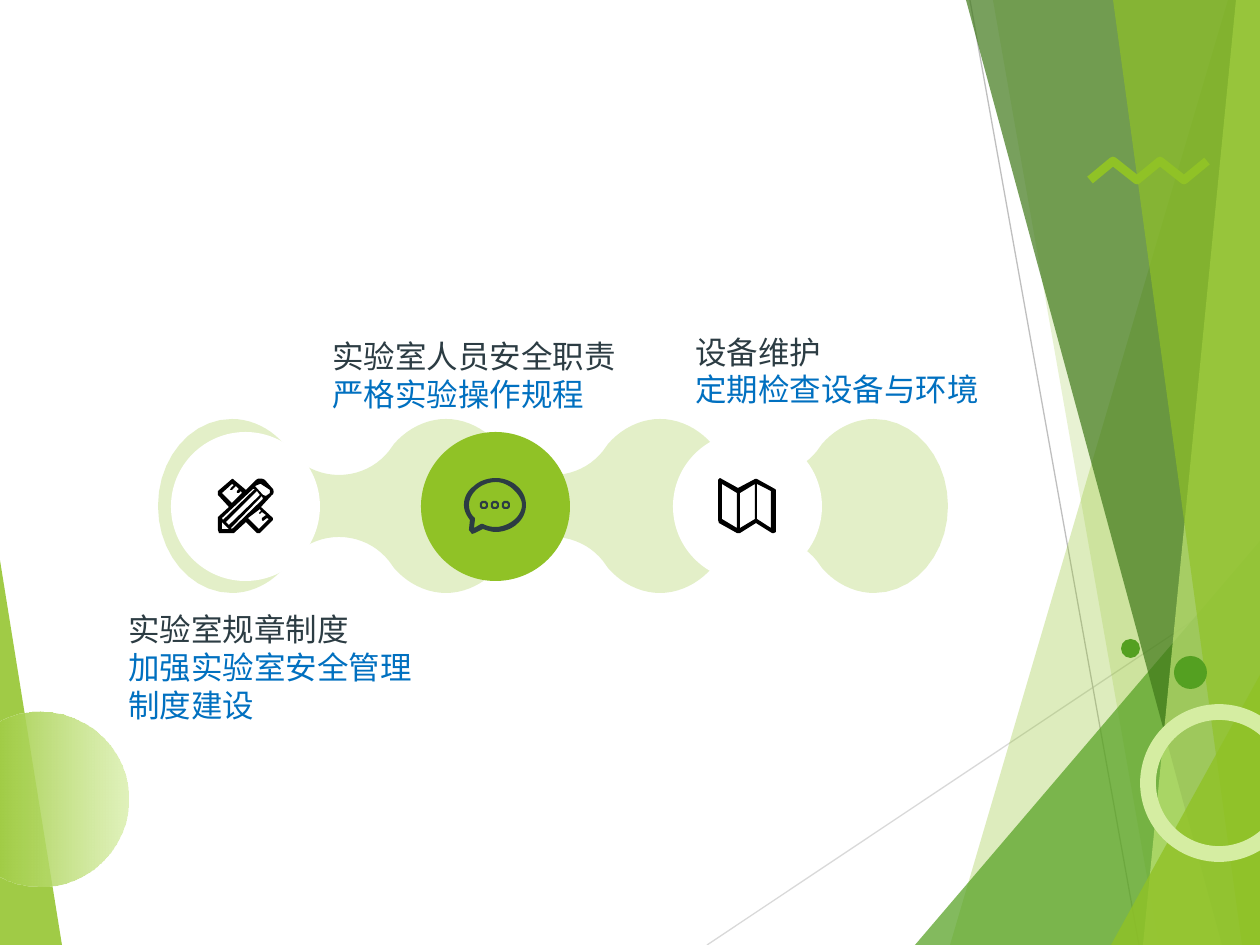
from dataclasses import dataclass

from lxml import etree
from pptx import Presentation
from pptx.dml.color import RGBColor
from pptx.enum.shapes import MSO_CONNECTOR, MSO_SHAPE
from pptx.oxml.ns import qn
from pptx.util import Emu, Pt

PX = 914400 / 126
WIDTH, HEIGHT = 1260, 945
FONT = "Noto Sans CJK JP"
GREEN, LEAF, PALE, DARK, BLUE = "90C226", "54A021", "D5EDA2", "2C3C43", "0070C0"
WHITE, BLACK = "FFFFFF", "000000"


@dataclass
class Facet:
    points: list
    color: str
    opacity: int


@dataclass
class Label:
    left: int
    top: int
    width: int
    height: int
    pitch: float
    heading: str
    detail: str


def px(value: float) -> Emu:
    return Emu(round(value * PX))


def rgb(color: str) -> RGBColor:
    return RGBColor.from_string(color)


def set_opacity(color_parent, percent: int) -> None:
    color = color_parent.find(".//" + qn("a:srgbClr"))
    etree.SubElement(color, qn("a:alpha")).set("val", str(percent * 1000))


def paint(shape, fill: str = "", line: str = "", weight: float = 0, opacity: int = 100) -> None:
    shape.shadow.inherit = False
    if fill:
        shape.fill.solid()
        shape.fill.fore_color.rgb = rgb(fill)
        if opacity < 100:
            set_opacity(shape._element.spPr.find(qn("a:solidFill")), opacity)
    else:
        shape.fill.background()
    if line:
        shape.line.color.rgb = rgb(line)
        shape.line.width = Pt(weight)
    else:
        shape.line.fill.background()


def trace(steps: list, samples: int = 10) -> list:
    """Turn points (x, y) and cubic curves (x1, y1, x2, y2, x, y) into points."""
    points = [steps[0]]
    for step in steps[1:]:
        if len(step) == 2:
            points.append(step)
            continue
        controls = [points[-1], step[:2], step[2:4], step[4:]]
        for index in range(1, samples + 1):
            t = index / samples
            weights = ((1 - t) ** 3, 3 * t * (1 - t) ** 2, 3 * t * t * (1 - t), t ** 3)
            points.append(tuple(sum(w * c[axis] for w, c in zip(weights, controls))
                                for axis in (0, 1)))
    return points


def draw_outline(shapes, contours: list, closed: bool = True):
    builder = None
    for contour in contours:
        points = [(px(x), px(y)) for x, y in trace(contour)]
        if builder is None:
            builder = shapes.build_freeform(*points[0], scale=1.0)
        else:
            builder.move_to(*points[0])
        builder.add_line_segments(points[1:], close=closed)
    return builder.convert_to_shape()


def draw_ellipse(shapes, left: int, top: int, size: int, **style):
    shape = shapes.add_shape(MSO_SHAPE.OVAL, px(left), px(top), px(size), px(size))
    paint(shape, **style)
    return shape


def draw_line(shapes, start: tuple, end: tuple, color: str) -> None:
    connector = shapes.add_connector(MSO_CONNECTOR.STRAIGHT, *map(px, start + end))
    connector.line.color.rgb = rgb(color)
    connector.line.width = Pt(0.75)
    etree.SubElement(connector._element.spPr, qn("a:effectLst"))


def draw_label(shapes, label: Label) -> None:
    box = shapes.add_textbox(px(label.left), px(label.top), px(label.width), px(label.height))
    frame = box.text_frame
    frame.word_wrap = True
    for index, (text, color) in enumerate(((label.heading, DARK), (label.detail, BLUE))):
        paragraph = frame.add_paragraph() if index else frame.paragraphs[0]
        paragraph.line_spacing = Pt(label.pitch)
        run = paragraph.add_run()
        run.text = text
        run.font.size = Pt(18)
        run.font.name = FONT
        run.font.color.rgb = rgb(color)
        etree.SubElement(run._r.get_or_add_rPr(), qn("a:ea")).set("typeface", FONT)


def chain_outline(first: int = 232, gap: int = 214, count: int = 4) -> list:
    """Row of discs joined by necks; the lower edge mirrors the upper one."""
    middle, last = 506, first + gap * (count - 1)
    top = [(first, 419)]
    for x in range(first, last, gap):
        end = x + gap
        top += trace([(x, 419), (x + 20, 419, x + 39, 429, x + 52, 444), (x + 57, 451),
                      (x + 69, 466, x + 87, 475, x + 107, 475),
                      (end - 87, 475, end - 69, 466, end - 57, 451), (end - 52, 444),
                      (end - 39, 429, end - 20, 419, end, 419)])
    bottom = [(x, 2 * middle - y) for x, y in reversed(top)]
    right_cap = [(last + 41, 419, last + 74, 458, last + 74, middle),
                 (last + 74, 554, last + 41, 593, last, 593)]
    left_cap = [(first - 41, 593, first - 74, 554, first - 74, middle),
                (first - 74, 458, first - 41, 419, first, 419)]
    return top + right_cap + bottom + left_cap


def octagon(x: int, y: int, radius: int) -> list:
    cut = radius / 2
    return [(x - cut, y - radius), (x + cut, y - radius), (x + radius, y - cut),
            (x + radius, y + cut), (x + cut, y + radius), (x - cut, y + radius),
            (x - radius, y + cut), (x - radius, y - cut)]


LEFT_FACET = Facet([(0, 560), (62, HEIGHT), (0, HEIGHT)], GREEN, 85)
RIGHT_FACETS = [
    Facet([(1228, 0), (950, HEIGHT), (WIDTH, HEIGHT), (WIDTH, 0)], GREEN, 30),
    Facet([(993, 0), (1159, HEIGHT), (WIDTH, HEIGHT), (WIDTH, 0)], GREEN, 20),
    Facet([(915, HEIGHT), (WIDTH, 541), (WIDTH, HEIGHT)], LEAF, 72),
    Facet([(966, 0), (1222, HEIGHT), (WIDTH, HEIGHT), (WIDTH, 0)], "3F7819", 70),
    Facet([(1236, 0), (1143, HEIGHT), (WIDTH, HEIGHT), (WIDTH, 0)], "C0E474", 70),
    Facet([(1113, 0), (1242, HEIGHT), (WIDTH, HEIGHT), (WIDTH, 0)], GREEN, 65),
    Facet([(1111, HEIGHT), (WIDTH, 675), (WIDTH, HEIGHT)], GREEN, 80),
]
SPEECH_ICON = [
    [(496, 478), (503, 478, 512, 481, 517, 486), (523, 491, 526, 498, 526, 505),
     (526, 512, 523, 519, 517, 524), (512, 529, 503, 532, 496, 532),
     (493, 532, 488, 531, 483, 529), (475, 533), (472, 534), (469, 530), (470, 520),
     (467, 516, 464, 511, 464, 505), (464, 498, 467, 491, 474, 486),
     (479, 481, 488, 478, 496, 478)],
    [(514, 490), (509, 485, 502, 482, 496, 482), (489, 482, 481, 485, 476, 490),
     (472, 494, 469, 499, 469, 505), (469, 510, 471, 515, 475, 518), (475, 520), (474, 528),
     (481, 524), (483, 524), (487, 526, 491, 527, 496, 527),
     (502, 527, 509, 524, 514, 520), (518, 517, 522, 511, 522, 505),
     (522, 499, 518, 494, 514, 490)],
] + [octagon(x, 505, radius) for x in (484, 495, 506) for radius in (4, 2)]
MAP_ICON = [
    [(757, 479), (775, 489), (776, 490), (776, 532), (774, 533), (772, 533), (756, 523),
     (740, 533), (737, 533), (719, 523), (718, 520), (718, 480), (720, 478), (738, 488),
     (755, 479)],
    [(757, 484), (757, 519), (771, 528), (771, 491)],
    [(755, 519), (755, 484), (740, 493), (740, 528)],
    [(737, 493), (722, 484), (722, 519), (737, 528)],
]
PENCIL_ICON = [
    [(261, 507), (273, 518), (273, 520), (260, 533), (257, 533), (246, 522), (234, 533),
     (219, 533), (218, 530), (218, 517), (229, 507), (218, 495), (218, 491), (232, 479),
     (233, 479), (246, 490), (256, 480), (258, 478, 262, 478, 265, 480), (273, 489),
     (274, 491, 274, 494, 272, 495)],
    [(232, 490), (230, 490), (231, 488), (234, 485), (232, 484), (222, 493), (232, 503),
     (242, 493), (241, 491), (239, 493), (237, 493), (237, 491), (239, 489), (236, 486)],
    [(248, 518), (259, 529), (269, 519), (267, 518), (263, 521), (262, 520), (262, 518),
     (266, 515), (262, 512), (260, 514), (259, 513), (261, 511), (260, 509)],
    [(229, 525), (260, 495), (257, 491), (226, 522)],
    [(263, 495), (266, 496), (270, 493), (270, 490), (261, 484), (260, 484), (255, 486)],
    [(262, 496), (231, 528), (232, 529), (263, 499)],
    [(223, 520), (255, 489), (253, 489), (222, 518)],
    [(222, 522), (222, 529), (229, 529)],
]
LABELS = [
    Label(683, 329, 321, 84, 20.6, "设备维护", "定期检查设备与环境"),
    Label(320, 331, 336, 82, 21.7, "实验室人员安全职责", "严格实验操作规程"),
    Label(116, 604, 336, 126, 21.7, "实验室规章制度", "加强实验室安全管理制度建设"),
]


def main() -> None:
    presentation = Presentation()
    presentation.slide_width, presentation.slide_height = px(WIDTH), px(HEIGHT)
    slide = presentation.slides.add_slide(presentation.slide_layouts[6])
    slide.background.fill.solid()
    slide.background.fill.fore_color.rgb = rgb(WHITE)
    shapes = slide.shapes

    # Faceted backdrop
    paint(draw_outline(shapes, [LEFT_FACET.points]), LEFT_FACET.color, opacity=LEFT_FACET.opacity)
    draw_line(shapes, (707, HEIGHT), (WIDTH, 576), "D9D9D9")
    draw_line(shapes, (970, 0), (1139, HEIGHT), "BFBFBF")
    for facet in RIGHT_FACETS:
        paint(draw_outline(shapes, [facet.points]), facet.color, opacity=facet.opacity)

    # Round ornaments and zigzag
    draw_ellipse(shapes, 1148, 712, 142, line=PALE, weight=9)
    draw_ellipse(shapes, 1174, 656, 33, fill=LEAF)
    draw_ellipse(shapes, 1121, 639, 19, fill=LEAF)
    ball = draw_ellipse(shapes, -47, 712, 175)
    ball.fill.gradient()
    ball.fill.gradient_angle = 0
    for stop, color, position in zip(ball.fill.gradient_stops, (GREEN, PALE), (0, 1)):
        stop.color.rgb = rgb(color)
        stop.position = position
    set_opacity(ball._element.spPr.findall(".//" + qn("a:gs"))[1], 73)
    zigzag = [(1090 + round(23.4 * index), 161 if index % 2 else 180) for index in range(6)]
    paint(draw_outline(shapes, [zigzag], closed=False), line=GREEN, weight=5)

    # Chain with its three icons
    paint(draw_outline(shapes, [chain_outline()]), GREEN, opacity=25)
    for left, disc, icon, color in ((421, GREEN, SPEECH_ICON, DARK),
                                    (673, WHITE, MAP_ICON, BLACK),
                                    (171, WHITE, PENCIL_ICON, BLACK)):
        draw_ellipse(shapes, left, 432, 149, fill=disc)
        paint(draw_outline(shapes, icon), color)

    # Labels
    for label in LABELS:
        draw_label(shapes, label)
    presentation.save("out.pptx")


if __name__ == "__main__":
    main()
